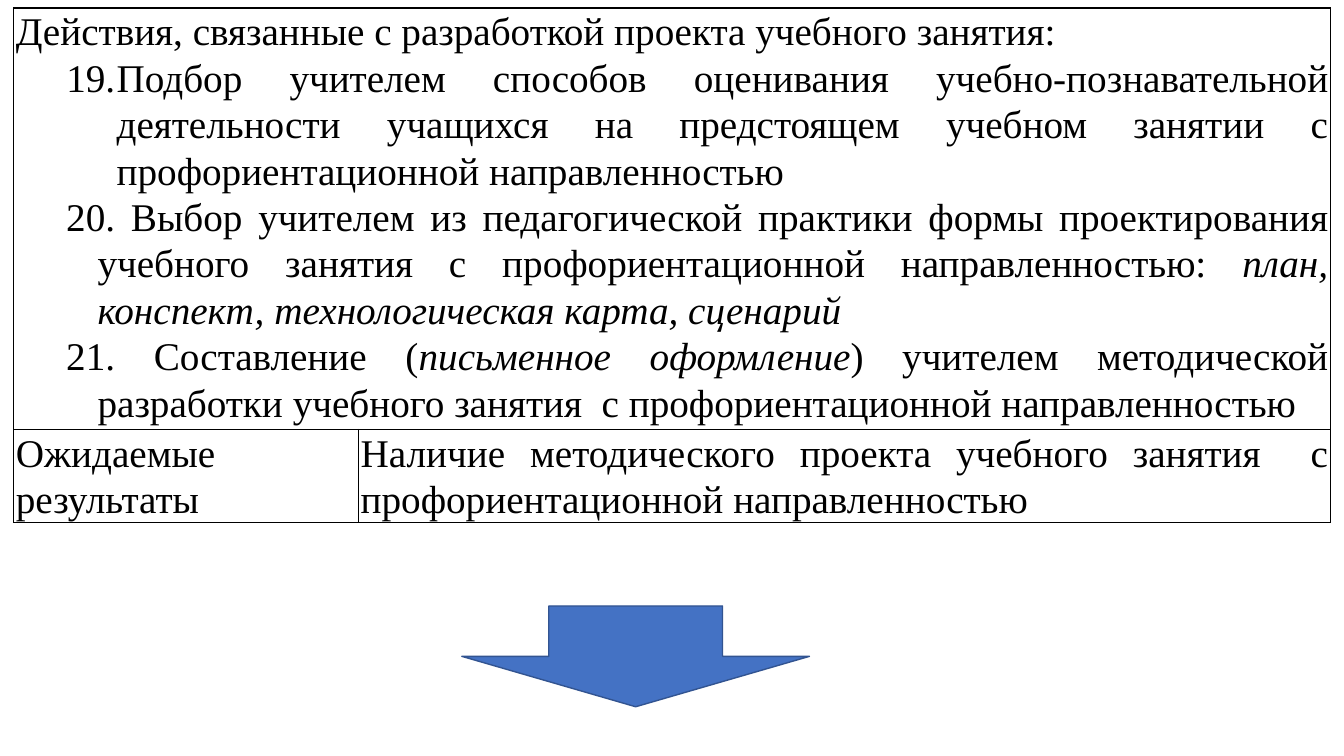
from lxml.etree import SubElement
from pptx import Presentation
from pptx.dml.color import RGBColor
from pptx.enum.shapes import MSO_SHAPE as SHAPE
from pptx.enum.text import PP_ALIGN as ALIGN
from pptx.oxml.ns import qn
from pptx.util import Cm, Pt

FONT = "Times New Roman"
BLACK = "000000"
HEADING = "Действия, связанные с разработкой проекта учебного занятия:"
FIRST_NUMBER = 19
ACTIONS = [
    (2.54, -1.27, [("Подбор учителем способов оценивания учебно-познавательной деятельности "
                    "учащихся на предстоящем учебном занятии с профориентационной "
                    "направленностью", False)]),
    (2.06, -0.79, [(" Выбор учителем из педагогической практики формы проектирования учебного "
                    "занятия с профориентационной направленностью: ", False),
                   ("план, конспект, технологическая карта, сценарий", True)]),
    (2.06, -0.79, [(" Составление (", False),
                   ("письменное оформление", True),
                   (") учителем методической разработки учебного занятия  с "
                    "профориентационной направленностью", False)]),
]
RESULT_LABEL = "Ожидаемые результаты"
RESULT = "Наличие методического проекта учебного занятия  с профориентационной направленностью"


def rgb(value):
    """Turn a hex string into a colour."""
    return RGBColor.from_string(value)


def write(p, runs, align=ALIGN.LEFT):
    """Write (text, italic) runs into a paragraph."""
    p.alignment = align
    p.line_spacing = 1.07
    for text, italic in runs:
        r = p.add_run()
        r.text = text
        r.font.name = FONT
        r.font.size = Pt(28)
        r.font.italic = italic
        r.font.color.rgb = rgb(BLACK)


def number(p, margin, indent):
    """Give a paragraph a number, a hanging indent and a tab stop."""
    p.level = 1
    p.line_spacing = 1.07
    pPr = p._p.get_or_add_pPr()
    pPr.set("marL", str(Cm(margin)))
    pPr.set("indent", str(Cm(indent)))
    SubElement(pPr, qn("a:buFont"), typeface="+mj-lt")
    SubElement(pPr, qn("a:buAutoNum"), type="arabicPeriod", startAt=str(FIRST_NUMBER))
    tabs = SubElement(pPr, qn("a:tabLst"))
    SubElement(tabs, qn("a:tab"), pos=str(Cm(1.3)), algn="l")


def style_cell(cell):
    """Set narrow margins, thin borders and no fill."""
    cell.margin_left = cell.margin_right = Cm(0.05)
    cell.margin_top = cell.margin_bottom = 0
    tcPr = cell._tc.get_or_add_tcPr()
    for side in ("lnL", "lnR", "lnT", "lnB"):
        ln = SubElement(tcPr, qn(f"a:{side}"), w=str(Pt(1)))
        fill = SubElement(ln, qn("a:solidFill"))
        SubElement(fill, qn("a:srgbClr"), val=BLACK)
    cell.fill.background()


def add_actions_table(s, left, top, width, height):
    """Place the table of actions and expected results."""
    label_width, result_height = Cm(8.69), Cm(0.64)
    table = s.shapes.add_table(2, 2, left, top, width, height).table
    table.first_row = table.horz_banding = False
    table.columns[0].width = label_width
    table.columns[1].width = width - label_width
    table.rows[0].height = height - result_height
    table.rows[1].height = result_height
    for cell in table.iter_cells():
        style_cell(cell)
    actions = table.cell(0, 0)
    actions.merge(table.cell(0, 1))
    tf = actions.text_frame
    write(tf.paragraphs[0], [(HEADING, False)])
    for margin, indent, runs in ACTIONS:
        p = tf.add_paragraph()
        number(p, margin, indent)
        write(p, runs, ALIGN.JUSTIFY)
    write(table.cell(1, 0).text_frame.paragraphs[0], [(RESULT_LABEL, False)])
    write(table.cell(1, 1).text_frame.paragraphs[0], [(RESULT, False)], ALIGN.JUSTIFY)


def add_down_arrow(s, left, top, width, height):
    """Place the arrow that leads to the next step."""
    sp = s.shapes.add_shape(SHAPE.DOWN_ARROW, left, top, width, height)
    sp.shadow.inherit = False
    sp.fill.solid()
    sp.fill.fore_color.rgb = rgb("4472C4")
    sp.line.color.rgb = rgb("325491")
    sp.line.width = Pt(1)


def main():
    """Build and save the slide."""
    prs = Presentation()
    prs.slide_width, prs.slide_height = Cm(33.87), Cm(19.05)
    s = prs.slides.add_slide(prs.slide_layouts[6])
    add_actions_table(s, Cm(0.35), Cm(0.2), Cm(33.17), Cm(11.26))
    add_down_arrow(s, Cm(11.64), Cm(15.27), Cm(8.76), Cm(2.54))
    prs.save("out.pptx")


if __name__ == "__main__":
    main()
